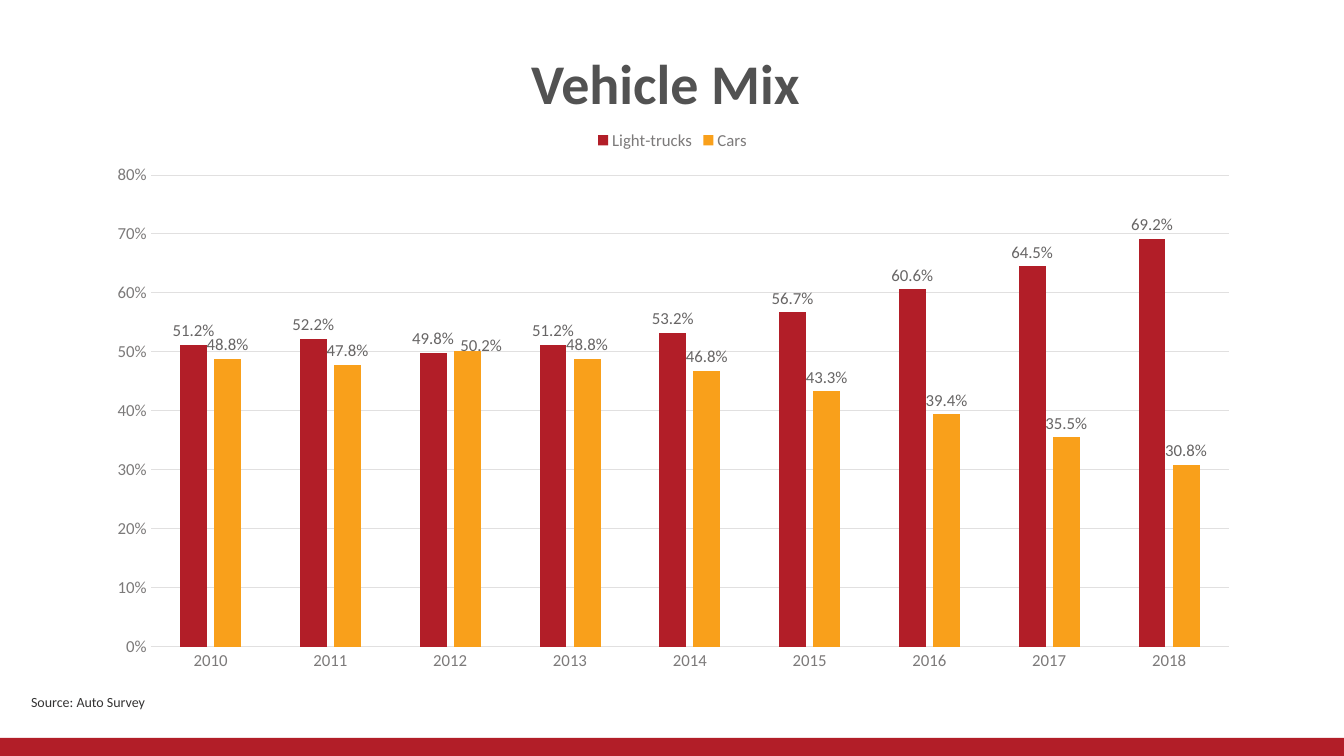
from lxml import etree
from pptx import Presentation
from pptx.chart.data import CategoryChartData
from pptx.dml.color import RGBColor
from pptx.enum.chart import XL_CHART_TYPE, XL_LABEL_POSITION, XL_LEGEND_POSITION, XL_TICK_MARK
from pptx.enum.shapes import MSO_SHAPE
from pptx.enum.text import MSO_ANCHOR, PP_ALIGN
from pptx.oxml.ns import qn
from pptx.util import Inches, Pt

COLUMNS = XL_CHART_TYPE.COLUMN_CLUSTERED
OUTSIDE = XL_LABEL_POSITION.OUTSIDE_END
LEGEND_TOP = XL_LEGEND_POSITION.TOP
NO_TICK = XL_TICK_MARK.NONE
RECT = MSO_SHAPE.RECTANGLE
MIDDLE, TOP = MSO_ANCHOR.MIDDLE, MSO_ANCHOR.TOP
CENTER, LEFT = PP_ALIGN.CENTER, PP_ALIGN.LEFT

# Content
TITLE = "Vehicle Mix"
SOURCE = "Source: Auto Survey"
YEARS = [str(year) for year in range(2010, 2019)]
SERIES = [
    ("Light-trucks", "B21E28", [0.512, 0.522, 0.498, 0.512, 0.532, 0.567, 0.606, 0.645, 0.692]),
    ("Cars", "F9A01B", [0.488, 0.478, 0.502, 0.488, 0.468, 0.433, 0.394, 0.355, 0.308]),
]
FONT = "Calibri"
RED, TITLE_GREY, DARK = "B21E28", "525252", "343333"
AXIS_GREY, LABEL_GREY, GRID_GREY = "7C7A7A", "676565", "E1E0E0"
PLOT_AREA = {"layoutTarget": "inner", "xMode": "edge", "yMode": "edge",
             "x": 0.05, "y": 0.1, "w": 0.93, "h": 0.84}
SHIFTED_YEAR = YEARS.index("2012")
LABEL_SHIFT = {"x": 0.012, "y": 0.016}


def rgb(code):
    return RGBColor.from_string(code)


def set_font(font, size, color, bold=False):
    font.name, font.size, font.bold = FONT, Pt(size), bold
    font.color.rgb = rgb(color)


def add_text(slide, text, box, size, color, bold=False, align=LEFT, anchor=TOP):
    tf = slide.shapes.add_textbox(*map(Inches, box)).text_frame
    tf.word_wrap, tf.vertical_anchor = True, anchor
    p = tf.paragraphs[0]
    p.alignment = align
    r = p.add_run()
    r.text = text
    set_font(r.font, size, color, bold)


def set_line(line, color):
    line.color.rgb = rgb(color)
    line.width = Pt(0.75)


def make_layout(values):
    layout = etree.Element(qn("c:layout"))
    manual = etree.SubElement(layout, qn("c:manualLayout"))
    for name, value in values.items():
        etree.SubElement(manual, qn("c:" + name)).set("val", str(value))
    return layout


prs = Presentation()
prs.slide_width, prs.slide_height = Inches(13.33), Inches(7.5)
slide = prs.slides.add_slide(prs.slide_layouts[6])

# Footer band and title
band = slide.shapes.add_shape(RECT, 0, Inches(7.32), prs.slide_width, Inches(0.18))
band.shadow.inherit = False
band.fill.solid()
band.fill.fore_color.rgb = rgb(RED)
band.line.fill.background()
add_text(slide, TITLE, (0.85, 0.09, 11.5, 1.45), 40, TITLE_GREY,
         bold=True, align=CENTER, anchor=MIDDLE)

# Chart
data = CategoryChartData(number_format="0.0%")
data.categories = YEARS
for name, _, values in SERIES:
    data.add_series(name, values)
box = map(Inches, (0.92, 1.18, 11.5, 5.57))
chart = slide.shapes.add_chart(COLUMNS, *box, data).chart
set_font(chart.font, 10, DARK)
chart.has_title = False
chart.has_legend = True
chart.legend.position = LEGEND_TOP
chart.legend.include_in_layout = False
set_font(chart.legend.font, 12, AXIS_GREY)

# Axes
years, shares = chart.category_axis, chart.value_axis
for axis in (years, shares):
    axis.major_tick_mark = axis.minor_tick_mark = NO_TICK
    set_font(axis.tick_labels.font, 12, AXIS_GREY)
set_line(years.format.line, GRID_GREY)
shares.format.line.fill.background()
shares.minimum_scale, shares.maximum_scale, shares.major_unit = 0, 0.8, 0.1
shares.tick_labels.number_format = "0%"
shares.tick_labels.number_format_is_linked = False
shares.has_major_gridlines = True
set_line(shares.major_gridlines.format.line, GRID_GREY)

# Columns and their labels
plot = chart.plots[0]
plot.gap_width, plot.overlap, plot.vary_by_categories = 219, -27, False
for s, (_, color, _) in zip(plot.series, SERIES):
    s.format.fill.solid()
    s.format.fill.fore_color.rgb = rgb(color)
    labels = s.data_labels
    labels.show_value = True
    labels.number_format, labels.number_format_is_linked = "0.0%", False
    labels.position = OUTSIDE
    set_font(labels.font, 12, LABEL_GREY)

# Move one label aside
cars = plot.series[1]
label = cars.points[SHIFTED_YEAR].data_label
set_font(label.font, 12, LABEL_GREY)
label.position = OUTSIDE
idx = cars._element.find(".//" + qn("c:dLbl")).find(qn("c:idx"))
num_fmt = etree.Element(qn("c:numFmt"), formatCode="0.0%", sourceLinked="0")
idx.addnext(num_fmt)
idx.addnext(make_layout(LABEL_SHIFT))

# Plot area position
plot_area = chart._chartSpace.find(".//" + qn("c:plotArea"))
for old in plot_area.findall(qn("c:layout")):
    plot_area.remove(old)
plot_area.insert(0, make_layout(PLOT_AREA))

# Source line
add_text(slide, SOURCE, (0.21, 6.83, 2.15, 0.27), 10, DARK)

prs.save("out.pptx")
